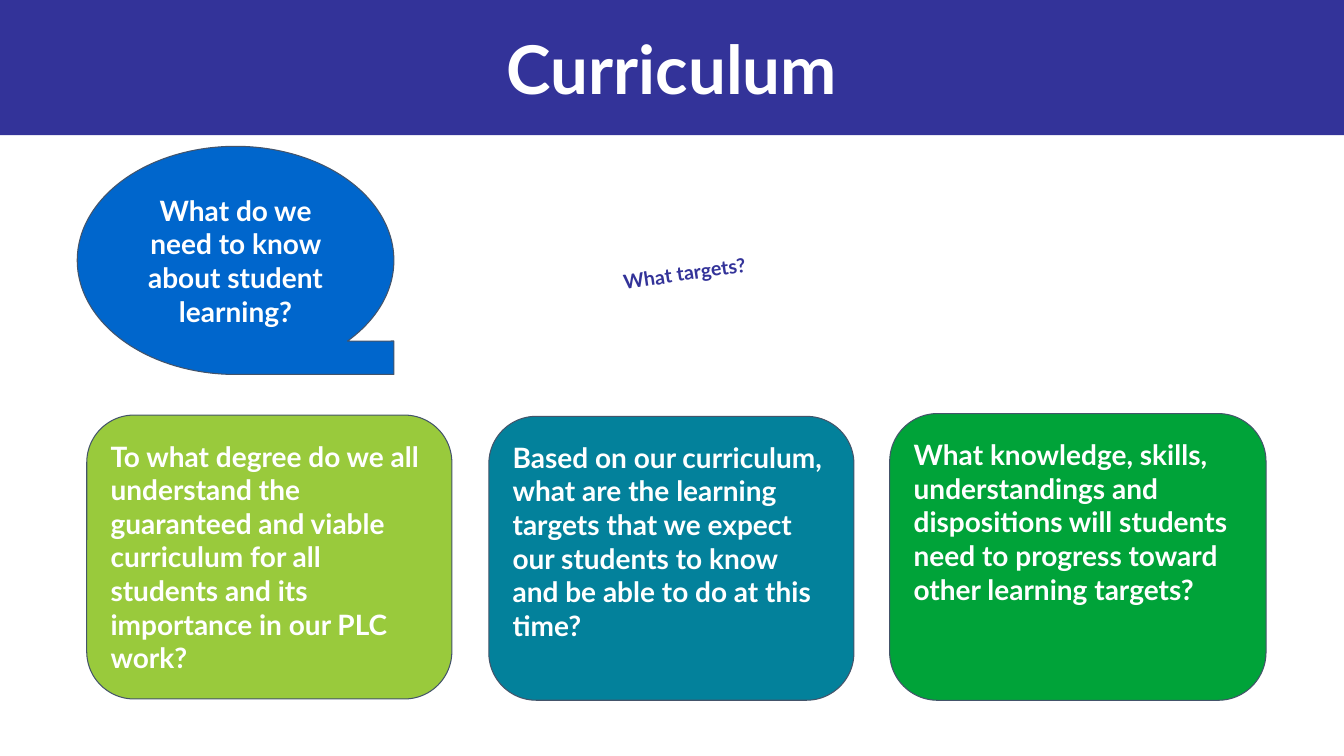
import pptx
import pptx.util
import pptx.dml.color
import pptx.enum.shapes
import pptx.enum.text

Pt = pptx.util.Pt
MSO_SHAPE = pptx.enum.shapes.MSO_SHAPE
ANCHOR = pptx.enum.text.MSO_ANCHOR
ALIGN = pptx.enum.text.PP_ALIGN

COLORS = {
    "banner": "333399",
    "question": "0066CC",
    "lime": "99CA3C",
    "teal": "03819B",
    "green": "00A339",
    "outline": "44546A",
    "white": "FFFFFF",
}


class Deck:
    font = {"name": "Lato", "bold": True}
    inset = 7.2

    def __init__(self, width, height):
        self.prs = pptx.Presentation()
        self.prs.slide_width = Pt(width)
        self.prs.slide_height = Pt(height)
        self.slide = self.prs.slides.add_slide(self.prs.slide_layouts[6])

    def rgb(self, name):
        return pptx.dml.color.RGBColor.from_string(COLORS[name])

    def apply(self, target, values):
        for name, value in values.items():
            setattr(target, name, value)

    def fill_text(self, sp, text, size, color="white", align=ALIGN.LEFT,
                  anchor=ANCHOR.TOP, after=0, pad=inset):
        tf = sp.text_frame
        self.apply(tf, {
            "word_wrap": True,
            "vertical_anchor": anchor,
            "margin_left": Pt(self.inset),
            "margin_right": Pt(self.inset),
            "margin_top": Pt(pad),
            "margin_bottom": Pt(pad),
        })
        p = tf.paragraphs[0]
        self.apply(p, {"alignment": align, "space_after": Pt(after)})
        r = p.add_run()
        r.text = text
        self.apply(r.font, {**self.font, "size": Pt(size)})
        r.font.color.rgb = self.rgb(color)

    def shape(self, kind, box, fill, outline=None):
        sp = self.slide.shapes.add_shape(kind, *map(Pt, box))
        sp.shadow.inherit = False
        sp.fill.solid()
        sp.fill.fore_color.rgb = self.rgb(fill)
        if outline:
            sp.line.color.rgb = self.rgb(outline)
            sp.line.width = Pt(0.75)
        else:
            sp.line.fill.background()
        return sp

    def text(self, box, text, size, rotation=0, **style):
        sp = self.slide.shapes.add_textbox(*map(Pt, box))
        sp.rotation = rotation
        self.fill_text(sp, text, size, pad=3.6, **style)

    def bubble(self, box, text):
        sp = self.shape(MSO_SHAPE.FLOWCHART_SEQUENTIAL_ACCESS_STORAGE, box,
                        "question", "outline")
        self.fill_text(sp, text, 20, align=ALIGN.CENTER, anchor=ANCHOR.MIDDLE)

    def card(self, box, fill, text):
        sp = self.shape(MSO_SHAPE.ROUNDED_RECTANGLE, box, fill, "outline")
        sp.adjustments[0] = 0.167
        self.fill_text(sp, text, 20, after=16)


def main():
    deck = Deck(960, 540)
    banner = (0, 0, 960, 96.5)
    deck.shape(MSO_SHAPE.RECTANGLE, banner, "banner")
    deck.bubble((55.2, 104.5, 226.2, 163),
                "What do we need to know about student learning?")
    cards = [
        ((62, 296.5, 260.8, 202.8), "lime",
         "To what degree do we all understand the guaranteed and viable "
         "curriculum for all students and its importance in our PLC work?"),
        ((349.2, 297.4, 260.8, 202.8), "teal",
         "Based on our curriculum, what are the learning targets that we "
         "expect our students to know and be able to do at this time?"),
        ((635.5, 295.4, 268.8, 204.8), "green",
         "What knowledge, skills, understandings and dispositions will "
         "students need to progress toward other learning targets?"),
    ]
    for box, fill, text in cards:
        deck.card(box, fill, text)
    deck.text(banner, "Curriculum", 48, align=ALIGN.CENTER,
              anchor=ANCHOR.MIDDLE, after=40)
    deck.text((387.4, 182.9, 205.9, 43.9), "What targets?", 14,
              rotation=351.7, color="banner", align=ALIGN.CENTER)
    deck.prs.save("out.pptx")


if __name__ == "__main__":
    main()
